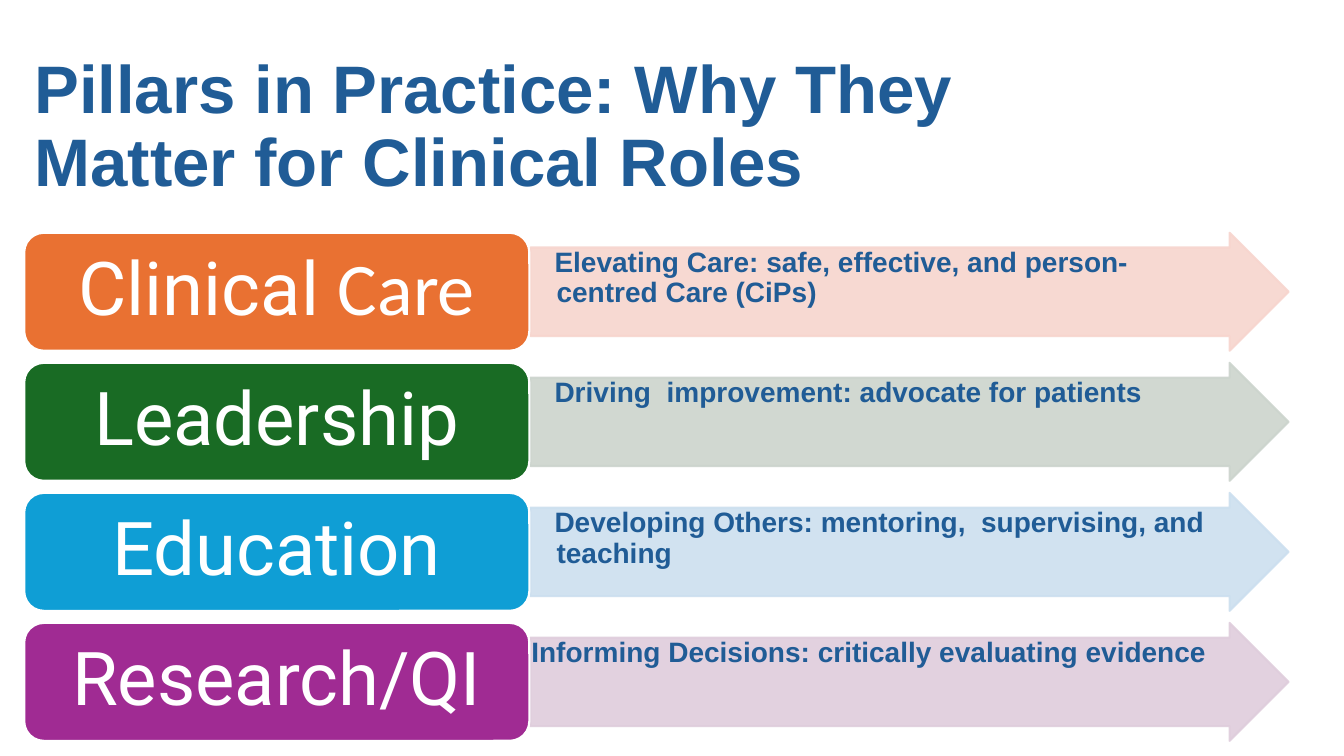
import lxml.etree
import pptx
import pptx.dml.color
import pptx.enum.shapes
import pptx.enum.text
import pptx.oxml.ns
import pptx.util

Inches, Pt = pptx.util.Inches, pptx.util.Pt
SHAPE = pptx.enum.shapes.MSO_SHAPE
ANCHOR = pptx.enum.text.MSO_ANCHOR
ALIGN = pptx.enum.text.PP_ALIGN

TOP, STEP, HIGH = 2.31, 1.29, 1.17

# label runs (text, font), label fill, arrow fill, note, first-line indent
PILLARS = [
    ([("Clinical ", "Roboto"), ("Care", "Calibri")], "E97132", "F7D5CE",
     "Elevating Care: safe, effective, and person-centred Care (CiPs)", -0.02),
    ([("Leadership", "Roboto")], "196B24", "CCD4CD",
     "Driving  improvement: advocate for patients", -0.02),
    ([("Education", "Roboto")], "0F9ED5", "CCDFEF",
     "Developing Others: mentoring,  supervising, and teaching", -0.02),
    ([("Research/QI", "Roboto")], "A02B93", "DFCDDC",
     "Informing Decisions: critically evaluating evidence", -0.25),
]


def color(text):
    return pptx.dml.color.RGBColor.from_string(text)


def fade(shape, share):
    """Set the opacity of a shape's fill and line, in percent."""
    qn = pptx.oxml.ns.qn
    for tint in shape._element.spPr.iter(qn("a:srgbClr")):
        alpha = lxml.etree.SubElement(tint, qn("a:alpha"))
        alpha.set("val", str(share * 1000))


class Deck:
    ink = "205C96"
    white = "FFFFFF"
    font = "Arial"

    def __init__(self):
        self.file = pptx.Presentation()
        self.file.slide_width = Inches(13.33)
        self.file.slide_height = Inches(7.5)
        self.slide = self.file.slides.add_slide(self.file.slide_layouts[5])

    def run(self, para, text, size, font, ink, bold):
        run = para.add_run()
        run.text = text
        run.font.size = Pt(size)
        run.font.name = font
        run.font.bold = bold
        run.font.color.rgb = color(ink)

    def frame(self, shape, anchor, align, pads):
        """Prepare the text frame and return its first paragraph."""
        frame = shape.text_frame
        frame.word_wrap = True
        frame.auto_size = pptx.enum.text.MSO_AUTO_SIZE.NONE
        frame.vertical_anchor = anchor
        (frame.margin_left, frame.margin_top,
         frame.margin_right, frame.margin_bottom) = map(Inches, pads)
        para = frame.paragraphs[0]
        para.alignment = align
        para.line_spacing = 0.9
        para.space_before = Pt(0)
        return para

    def title(self, lines):
        shape = self.slide.shapes.title
        shape.left, shape.top = Inches(0.24), Inches(0.55)
        shape.width, shape.height = Inches(11.5), Inches(1.45)
        para = self.frame(shape, ANCHOR.MIDDLE, ALIGN.LEFT,
                          (0.1, 0.05, 0.1, 0.05))
        for i, line in enumerate(lines):
            if i:
                para.add_line_break()
            self.run(para, line, 48, self.font, self.ink, True)

    def shape(self, kind, left, top, width, fill, line):
        shape = self.slide.shapes.add_shape(
            kind, Inches(left), Inches(top), Inches(width), Inches(HIGH))
        shape.shadow.inherit = False
        shape.fill.solid()
        shape.fill.fore_color.rgb = color(fill)
        shape.line.color.rgb = color(line)
        shape.line.width = Pt(1.5)
        return shape

    def arrow(self, top, fill, note, indent):
        shape = self.shape(SHAPE.RIGHT_ARROW, 5.26, top, 7.52, fill, fill)
        shape.adjustments[0], shape.adjustments[1] = 0.75, 0.5
        fade(shape, 90)
        para = self.frame(shape, ANCHOR.TOP, ALIGN.LEFT,
                          (0.01, 0.01, 0.3, 0.01))
        props = para._p.get_or_add_pPr()
        props.set("marL", str(Inches(0.25)))
        props.set("indent", str(Inches(indent)))
        self.run(para, note, 20, self.font, self.ink, True)

    def label(self, top, fill, runs):
        shape = self.shape(SHAPE.ROUNDED_RECTANGLE, 0.24, top, 5.01,
                           fill, self.white)
        para = self.frame(shape, ANCHOR.MIDDLE, ALIGN.CENTER,
                          (0.22, 0.11, 0.22, 0.11))
        for text, font in runs:
            self.run(para, text, 53, font, self.white, False)


def main():
    deck = Deck()
    deck.title(["Pillars in Practice: Why They", "Matter for Clinical Roles"])
    for i, (runs, dark, light, note, indent) in enumerate(PILLARS):
        top = TOP + i * STEP
        deck.arrow(top, light, note, indent)
        deck.label(top, dark, runs)
    deck.file.save("out.pptx")


if __name__ == "__main__":
    main()
